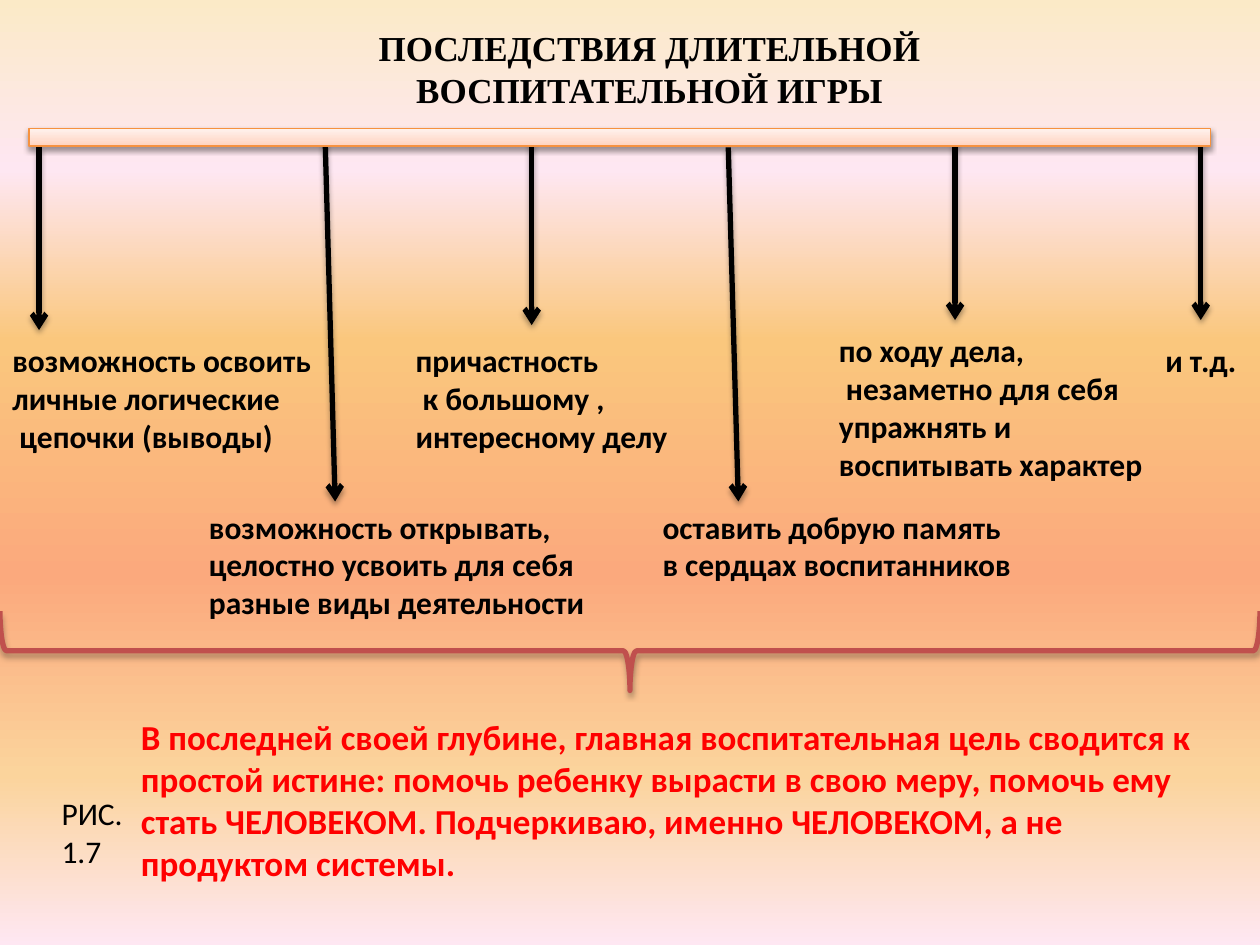
from dataclasses import dataclass

from lxml.etree import SubElement
from pptx import Presentation
from pptx.dml.color import RGBColor
from pptx.enum.shapes import MSO_CONNECTOR, MSO_SHAPE
from pptx.enum.text import MSO_ANCHOR, MSO_AUTO_SIZE, PP_ALIGN
from pptx.oxml.ns import qn
from pptx.util import Pt

EMU_PER_PX = 9144  # 100 px to the inch


@dataclass(frozen=True)
class Theme:
    heading_font: str = "Times New Roman"
    body_font: str = "Calibri"
    large: int = 20
    normal: int = 18
    ink: str = "000000"
    accent: str = "FF0000"
    bar_line: str = "F69240"
    brace_line: str = "C0504D"
    thick: float = 3
    thin: float = 0.75
    background: tuple = ((0, "FBEAC7"), (18, "FEE7F2"), (36, "FAC77D"),
                         (61, "FBA97D"), (82, "FBD49C"), (100, "FEE7F2"))
    bar_fill: tuple = ((0, "FFD2BD"), (35, "FFDED0"), (100, "FFF2ED"))


THEME = Theme()

TITLE = "ПОСЛЕДСТВИЯ ДЛИТЕЛЬНОЙ\nВОСПИТАТЕЛЬНОЙ ИГРЫ"
CAPTION = "РИС.\n1.7"
CONCLUSION = (
    "В последней своей глубине, главная воспитательная цель сводится к "
    "простой истине: помочь ребенку вырасти в свою меру, помочь ему стать "
    "ЧЕЛОВЕКОМ. Подчеркиваю, именно ЧЕЛОВЕКОМ, а не продуктом системы."
)

# Arrow start, arrow end, label box and label text, from left to right
CONSEQUENCES = [
    ((31, 117), (31, 262), (0, 266, 259, 101),
     "возможность освоить\nличные логические\n цепочки (выводы)"),
    ((258, 109), (266, 398), (156, 398, 321, 101),
     "возможность открывать, \nцелостно усвоить для себя\nразные виды деятельности"),
    ((422, 109), (422, 258), (320, 266, 222, 101),
     "причастность\n к большому , \nинтересному делу"),
    ((578, 117), (586, 398), (516, 398, 301, 71),
     "оставить добрую память \nв сердцах воспитанников"),
    ((758, 109), (758, 254), (656, 258, 263, 131),
     "по ходу дела,\n незаметно для себя\nупражнять и \nвоспитывать характер"),
    ((953, 109), (953, 254), (915, 266, 85, 40), "и т.д. "),
]


def emu(*lengths):
    return [round(length * EMU_PER_PX) for length in lengths]


def set_gradient(fill, element, stops, angle):
    """Give a fill any number of colour stops."""
    fill.gradient()
    gradient = next(element.iter(qn("a:gradFill")))
    gradient.clear()
    stop_list = SubElement(gradient, qn("a:gsLst"))
    for position, color in stops:
        stop = SubElement(stop_list, qn("a:gs"), pos=str(position * 1000))
        SubElement(stop, qn("a:srgbClr"), val=color)
    SubElement(gradient, qn("a:lin"), ang=str(angle * 60000), scaled="0")


def set_line(shape, color, width):
    shape.line.color.rgb = RGBColor.from_string(color)
    shape.line.width = Pt(width)


def add_shadow(shape, opacity=35):
    """Add the soft downward shadow; call it after fill and line are set."""
    effects = SubElement(shape._element.spPr, qn("a:effectLst"))
    shadow = SubElement(effects, qn("a:outerShdw"), blurRad="40000",
                        dist="23000", dir="5400000", rotWithShape="0")
    color = SubElement(shadow, qn("a:srgbClr"), val=THEME.ink)
    SubElement(color, qn("a:alpha"), val=str(opacity * 1000))


def write_text(shape, text, wrap=True, anchor=MSO_ANCHOR.TOP,
               align=PP_ALIGN.LEFT, color=THEME.ink, **font_values):
    frame = shape.text_frame
    frame.word_wrap = wrap
    frame.auto_size = MSO_AUTO_SIZE.SHAPE_TO_FIT_TEXT
    frame.vertical_anchor = anchor
    paragraph = frame.paragraphs[0]
    paragraph.text = text.replace("\n", "\v")
    paragraph.alignment = align
    values = {"name": THEME.body_font, "size": Pt(THEME.normal), "bold": True}
    values.update(font_values)
    for run in paragraph.runs:
        for name, value in values.items():
            setattr(run.font, name, value)
        run.font.color.rgb = RGBColor.from_string(color)


def add_text(slide, box, text, **values):
    write_text(slide.shapes.add_textbox(*emu(*box)), text, **values)


def add_arrow(slide, start, end):
    arrow = slide.shapes.add_connector(MSO_CONNECTOR.STRAIGHT, *emu(*start, *end))
    set_line(arrow, THEME.ink, THEME.thick)
    SubElement(arrow.line._get_or_add_ln(), qn("a:tailEnd"), type="arrow")
    add_shadow(arrow)


def place_title(slide, box):
    title = slide.shapes.title
    title.left, title.top, title.width, title.height = emu(*box)
    write_text(title, TITLE, wrap=False, anchor=MSO_ANCHOR.MIDDLE,
               align=PP_ALIGN.CENTER, name=THEME.heading_font,
               size=Pt(THEME.large))


def add_consequences(slide, bar_box):
    """Draw the bar with its arrows and the label under each arrow."""
    for start, end, label_box, text in CONSEQUENCES:
        add_arrow(slide, start, end)
        add_text(slide, label_box, text, wrap=False)
    bar = slide.shapes.add_shape(MSO_SHAPE.RECTANGLE, *emu(*bar_box))
    set_gradient(bar.fill, bar._element, THEME.bar_fill, 270)
    set_line(bar, THEME.bar_line, THEME.thin)
    add_shadow(bar, opacity=38)


def add_brace(slide, box):
    """Lay a left brace on its side so that it fills the box."""
    left, top, width, height = box
    middle_x, middle_y = left + width / 2, top + height / 2
    brace = slide.shapes.add_shape(
        MSO_SHAPE.LEFT_BRACE,
        *emu(middle_x - height / 2, middle_y - width / 2, height, width))
    brace.rotation = 270
    brace.fill.background()
    set_line(brace, THEME.brace_line, THEME.thick)
    add_shadow(brace)


def add_conclusion(slide, box):
    """Place the closing statement with the figure caption beside it."""
    left, top, _, _ = box
    add_text(slide, (left - 63, top + 62, 86, 71), CAPTION, bold=False)
    add_text(slide, box, CONCLUSION, color=THEME.accent, size=Pt(THEME.large))


def main():
    presentation = Presentation()
    presentation.slide_width, presentation.slide_height = emu(1000, 750)
    slide = presentation.slides.add_slide(presentation.slide_layouts[5])
    set_gradient(slide.background.fill, slide._element, THEME.background, 90)

    place_title(slide, (289, 16, 453, 77))
    add_consequences(slide, (23, 102, 938, 14))
    add_brace(slide, (0, 485, 1000, 63))
    add_conclusion(slide, (102, 563, 883, 145))
    presentation.save("out.pptx")


if __name__ == "__main__":
    main()
